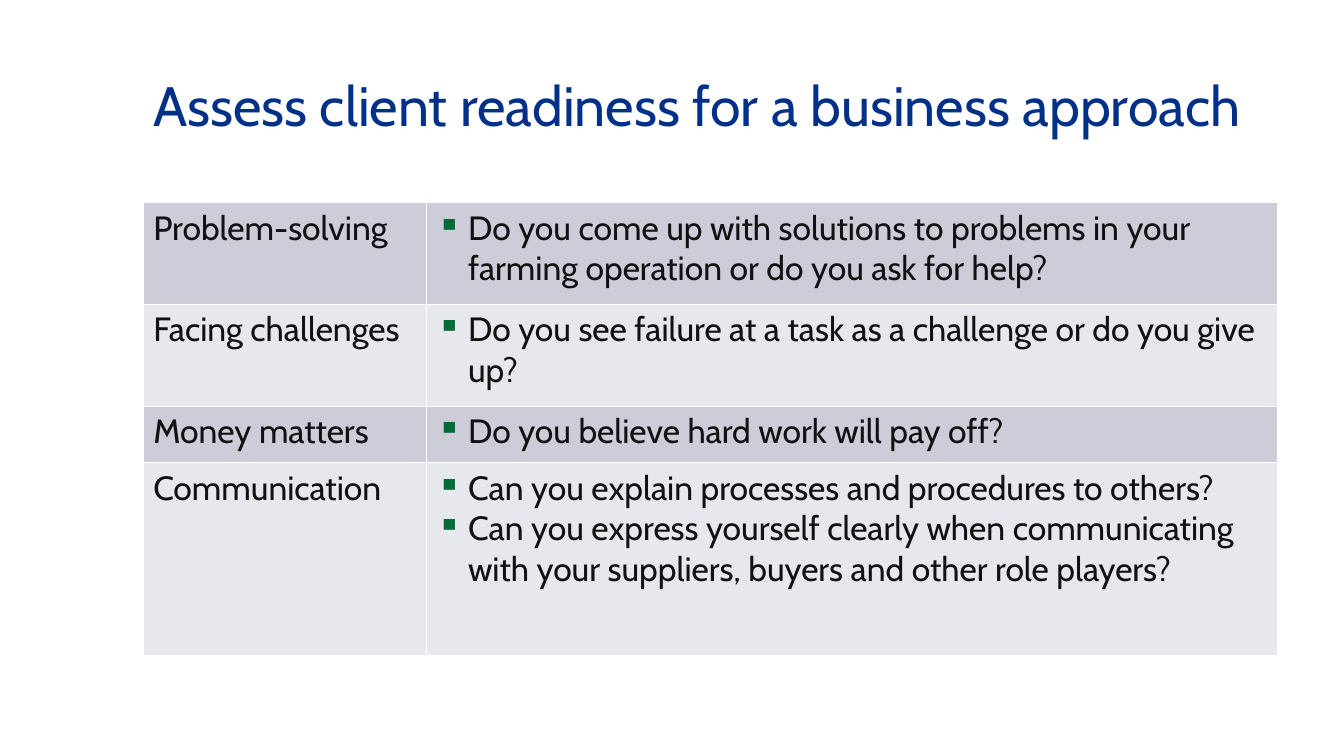
from lxml.etree import SubElement
from pptx import Presentation
from pptx.dml.color import RGBColor
from pptx.enum.text import MSO_ANCHOR
from pptx.oxml.ns import qn
from pptx.util import Inches, Pt

COLORS = {
    "title": "003087",
    "text": "111111",
    "bullet": "046A38",
    "odd_row": "CCCDD9",
    "even_row": "E7E8ED",
    "border": "FFFFFF",
}
FONT = "Cabin"
LEFT, WIDTH = Inches(1.42), Inches(11.25)
TOPIC_SHARE = 0.25
BULLET_INDENT = Inches(0.31)

# Topic, questions, row height in inches
READINESS = [
    ("Problem-solving",
     ["Do you come up with solutions to problems in your farming operation "
      "or do you ask for help?"], 1.01),
    ("Facing challenges",
     ["Do you see failure at a task as a challenge or do you give up?"], 1.01),
    ("Money matters", ["Do you believe hard work will pay off?"], 0.56),
    ("Communication",
     ["Can you explain processes and procedures to others?",
      "Can you express yourself clearly when communicating with your "
      "suppliers, buyers and other role players?"], 1.91),
]


def style_font(para, size, color):
    para.font.name = FONT
    para.font.size = Pt(size)
    para.font.color.rgb = RGBColor.from_string(COLORS[color])


def add_color(parent, color):
    SubElement(parent, qn("a:srgbClr"), val=COLORS[color])


def add_bullet(para):
    props = para._p.get_or_add_pPr()
    props.set("marL", str(BULLET_INDENT))
    props.set("indent", str(-BULLET_INDENT))
    add_color(SubElement(props, qn("a:buClr")), "bullet")
    SubElement(props, qn("a:buChar"), char="▪")


def add_borders(cell):
    props = cell._tc.get_or_add_tcPr()
    for side in ("lnL", "lnR", "lnT", "lnB"):
        line = SubElement(props, qn(f"a:{side}"), w=str(Pt(1)))
        add_color(SubElement(line, qn("a:solidFill")), "border")


def fill_cell(cell, lines, fill, bulleted=False):
    add_borders(cell)
    cell.fill.solid()
    cell.fill.fore_color.rgb = RGBColor.from_string(COLORS[fill])
    frame = cell.text_frame
    frame.text = "\n".join(lines)
    for para in frame.paragraphs:
        if bulleted:
            add_bullet(para)
        style_font(para, 24, "text")


def add_title(page, text):
    box = page.shapes.add_textbox(LEFT, Inches(0.52), WIDTH, Inches(1.03))
    frame = box.text_frame
    frame.word_wrap = True
    frame.vertical_anchor = MSO_ANCHOR.MIDDLE
    frame.text = text
    style_font(frame.paragraphs[0], 39.6, "title")


def add_readiness_table(page):
    height = Inches(sum(row[2] for row in READINESS))
    table = page.shapes.add_table(
        len(READINESS), 2, LEFT, Inches(2.01), WIDTH, height).table
    table.first_row = table.horz_banding = False
    table.columns[0].width = int(WIDTH * TOPIC_SHARE)
    table.columns[1].width = int(WIDTH * (1 - TOPIC_SHARE))
    for index, (topic, questions, row_height) in enumerate(READINESS):
        table.rows[index].height = Inches(row_height)
        fill = "even_row" if index % 2 else "odd_row"
        fill_cell(table.cell(index, 0), [topic], fill)
        fill_cell(table.cell(index, 1), questions, fill, bulleted=True)


def main():
    deck = Presentation()
    deck.slide_width, deck.slide_height = Inches(13.33), Inches(7.5)
    page = deck.slides.add_slide(deck.slide_layouts[6])
    add_title(page, "Assess client readiness for a business approach")
    add_readiness_table(page)
    deck.save("out.pptx")


if __name__ == "__main__":
    main()
